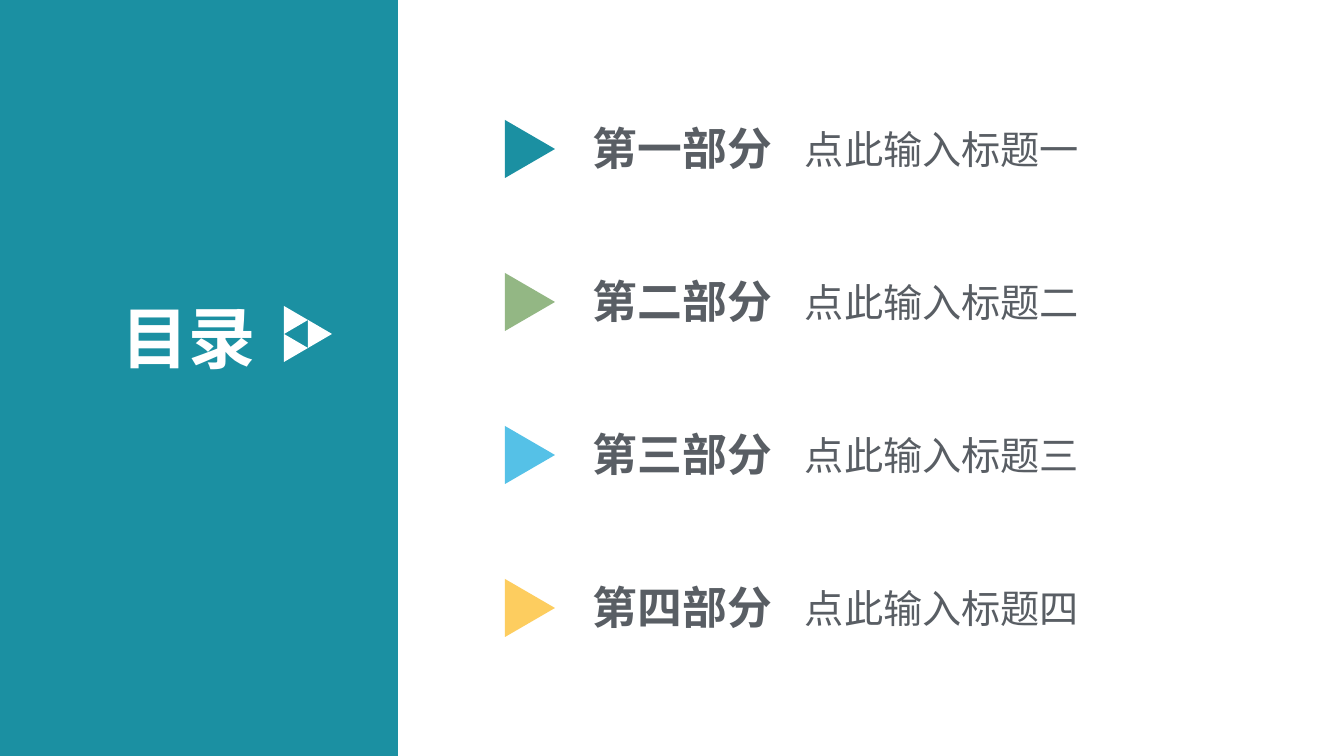
from pptx import Presentation
from pptx.dml.color import RGBColor
from pptx.enum.shapes import MSO_SHAPE
from pptx.enum.text import MSO_ANCHOR, MSO_AUTO_SIZE, PP_ALIGN
from pptx.util import Pt
from lxml.etree import SubElement
from pptx.oxml.ns import qn

PX = 914400 / 100.8
FONT = "Noto Sans CJK SC"
TEAL, WHITE, GREY = "1B90A2", "FFFFFF", "595E64"


def put_text(sp, text, *, box, size, color, bold=False):
    sp.left, sp.top, sp.width, sp.height = [round(v * PX) for v in box]
    tf = sp.text_frame
    tf.word_wrap = True
    tf.auto_size = MSO_AUTO_SIZE.SHAPE_TO_FIT_TEXT
    tf.vertical_anchor = MSO_ANCHOR.TOP
    p = tf.paragraphs[0]
    p.alignment = PP_ALIGN.LEFT
    r = p.add_run()
    r.text = text
    r.font.size = Pt(size)
    r.font.bold = bold
    r.font.name = FONT
    r.font.color.rgb = RGBColor.from_string(color)
    SubElement(r._r.rPr, qn("a:ea")).set("typeface", FONT)


def add_filled(kind, x, y, w, h, color, rotation=0):
    sp = s.shapes.add_shape(kind, *[round(v * PX) for v in (x, y, w, h)])
    sp.rotation = rotation
    sp.shadow.inherit = False
    sp.fill.solid()
    sp.fill.fore_color.rgb = RGBColor.from_string(color)
    sp.line.fill.background()


prs = Presentation()
prs.slide_width, prs.slide_height = round(1344 * PX), round(756 * PX)
s = prs.slides.add_slide(prs.slide_layouts[5])

add_filled(MSO_SHAPE.RECTANGLE, 0, 0, 398, 756, TEAL)
title = s.shapes.title
s.shapes._spTree.append(title._element)
put_text(title, "目录", box=(111, 291, 175, 92), size=48, color=WHITE, bold=True)

for x, y in [(282, 308), (282, 336), (306, 322)]:
    add_filled(MSO_SHAPE.ISOSCELES_TRIANGLE, x, y, 28, 24, WHITE, rotation=90)

sections = [
    ("第一部分", "点此输入标题一", TEAL),
    ("第二部分", "点此输入标题二", "93B784"),
    ("第三部分", "点此输入标题三", "55C1E7"),
    ("第四部分", "点此输入标题四", "FDCD5F"),
]
for i, (label, heading, color) in enumerate(sections):
    y = 116 + 153 * i
    add_filled(MSO_SHAPE.ISOSCELES_TRIANGLE, 501, y + 8, 58, 50, color, rotation=90)
    put_text(s.shapes.add_textbox(0, 0, 0, 0), label,
             box=(583, y, 213, 65), size=32, color=GREY, bold=True)
    put_text(s.shapes.add_textbox(0, 0, 0, 0), heading,
             box=(795, y + 4, 403, 57), size=28, color=GREY)

prs.save("out.pptx")
